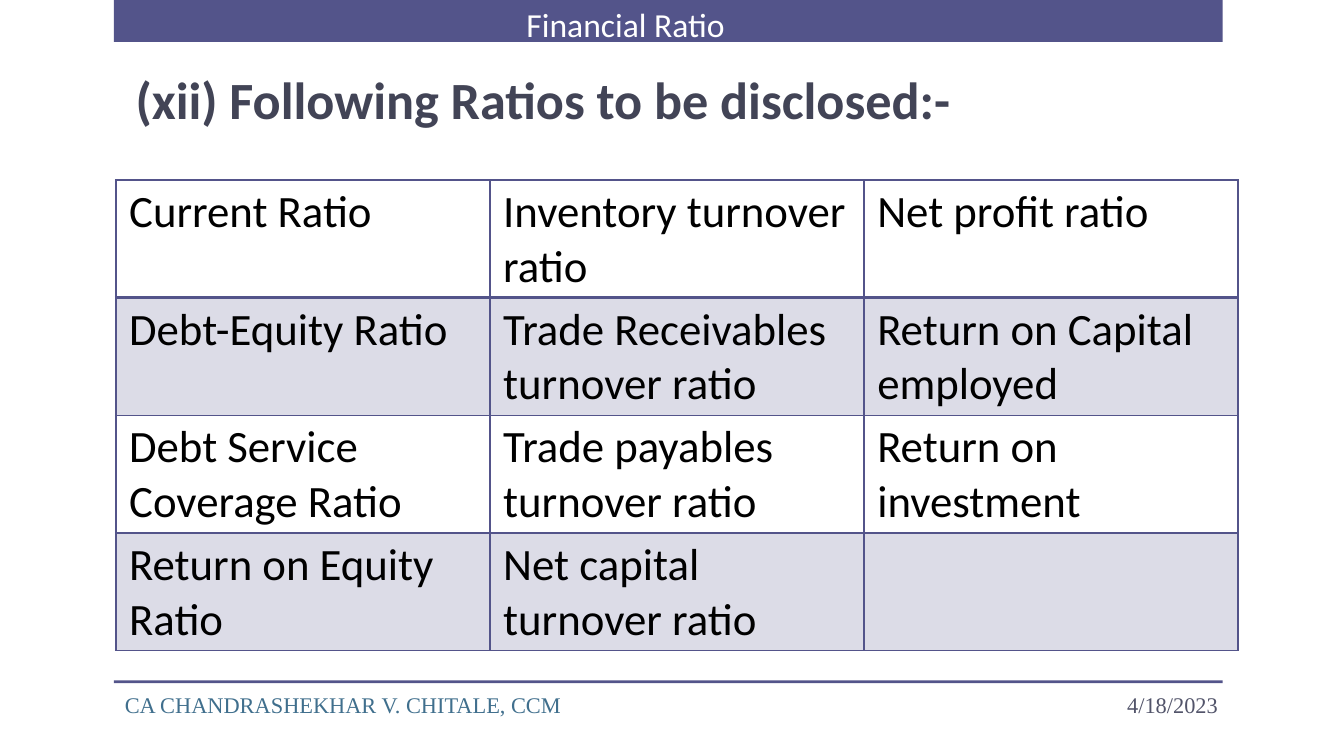
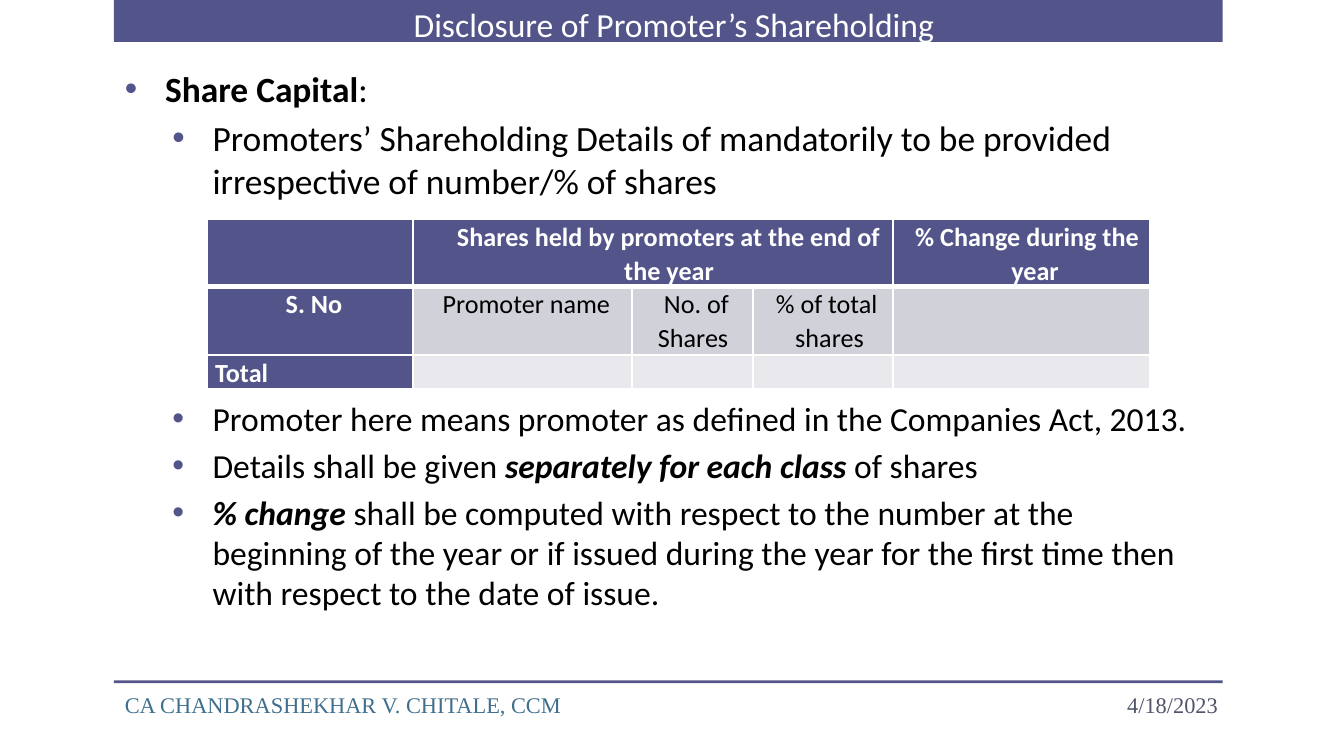
from dataclasses import dataclass
from typing import Optional

from lxml.etree import SubElement
from pptx import Presentation
from pptx.dml.color import RGBColor
from pptx.enum.shapes import MSO_SHAPE as Shape
from pptx.enum.text import MSO_ANCHOR as Anchor, MSO_AUTO_SIZE as AutoSize, PP_ALIGN as Align
from pptx.oxml.ns import qn
from pptx.util import Pt

COLORS = {
    "accent": "53548A",
    "heading": "424456",
    "date": "52546A",
    "author": "406F8D",
    "black": "000000",
    "white": "FFFFFF",
    "band_dark": "D1D1DA",
    "band_light": "E9E9ED",
}


@dataclass(frozen=True)
class Look:
    size: float
    color: str
    bold: bool = False
    font: str = "Calibri"


@dataclass(frozen=True)
class Box:
    left: float
    top: float
    width: float
    height: float

    def lengths(self) -> tuple:
        return Pt(self.left), Pt(self.top), Pt(self.width), Pt(self.height)


@dataclass(frozen=True)
class Run:
    text: str
    bold: bool = False
    italic: bool = False


@dataclass(frozen=True)
class Bullet:
    runs: tuple
    size: float = 18
    margin: float = 47
    before: float = 3.6


@dataclass(frozen=True)
class Cell:
    text: str = ""
    fill: Optional[str] = None
    alpha: Optional[int] = None
    look: Look = Look(14, "black")
    align: Optional[Align] = None
    margin: float = 0
    indent: float = 0
    span: int = 1
    spacing: Optional[float] = None


@dataclass(frozen=True)
class Grid:
    box: Box
    columns: tuple
    rows: tuple
    cells: tuple
    border: str
    header_rule: float
    inset_x: float = 0
    inset_y: float = 0


BAND = Box(61, 0, 594, 22.5)
FOOTER_RULE = Box(61, 364.5, 594, 1.5)
FOOTERS = (
    (Box(491.8, 366.5, 167.8, 21.6), "4/18/2023",
     Look(12, "date", font="Times New Roman"), Align.RIGHT),
    (Box(59.8, 366.5, 383.8, 21.6), "CA CHANDRASHEKHAR V. CHITALE, CCM",
     Look(12, "author", font="Times New Roman"), Align.LEFT),
)

RATIOS = (
    ("Current Ratio", "Inventory turnover ratio", "Net profit ratio"),
    ("Debt-Equity Ratio", "Trade Receivables turnover ratio", "Return on Capital employed"),
    ("Debt Service Coverage Ratio", "Trade payables turnover ratio", "Return on investment"),
    ("Return on Equity Ratio", "Net capital turnover ratio", ""),
)
RATIO_GRID = Grid(
    box=Box(62, 96.5, 601, 252),
    columns=(200.4,) * 3,
    rows=(63,) * 4,
    cells=tuple(
        tuple(Cell(text, "accent" if row % 2 else None, 20, Look(24, "black"))
              for text in texts)
        for row, texts in enumerate(RATIOS)
    ),
    border="accent", header_rule=2, inset_x=7.2, inset_y=2.7,
)

HEAD = Look(14, "white", bold=True)


def head(text: str = "", margin: float = 0, indent: float = 0,
         align: Align = Align.CENTER, span: int = 1) -> Cell:
    return Cell(text, "accent", None, HEAD, align, margin, indent, span, 1.07)


def column_name(text: str, margin: float, indent: float) -> Cell:
    return Cell(text, "band_dark", align=Align.CENTER, margin=margin,
                indent=indent, spacing=1.07)


PROMOTER_GRID = Grid(
    box=Box(111, 117.5, 505, 89.5),
    columns=(110.2, 117.4, 64.8, 74.9, 137.5),
    rows=(36, 36.7, 18),
    cells=(
        (head(), head("Shares held by promoters at the end of the year", 17.5, -0.5, span=3),
         None, None, head("% Change during the year", 15, -8.5)),
        (head("S. No", 49.7, -45.4), column_name("Promoter name", 49.7, -45.4),
         column_name("No. of Shares", 0.7, 3.6), column_name("% of total shares", 7.2, -3),
         Cell(fill="band_dark")),
        (head("Total", 49.7, -45.4, Align.LEFT), *(Cell(fill="band_light"),) * 4),
    ),
    border="white", header_rule=3,
)

SHARE_CAPITAL = (
    Bullet((Run("Share Capital", bold=True), Run(":")), 19, 21.6, 0),
    Bullet((Run("Promoters’ Shareholding Details of mandatorily to be provided "
                "irrespective of number/% of shares"),), 19),
    # Leaves room for the promoter table
    Bullet((Run("Promoter here means promoter as defined in the Companies Act, 2013."),),
           before=105),
    Bullet((Run("Details shall be given "),
            Run("separately for each class ", bold=True, italic=True), Run("of shares"))),
    Bullet((Run("% change ", bold=True, italic=True),
            Run("shall be computed with respect to the number at the beginning of the year "
                "or if issued during the year for the first time then with respect to the "
                "date of issue."))),
)


def rgb(name: str) -> RGBColor:
    return RGBColor.from_string(COLORS[name])


def set_look(font, look: Look) -> None:
    font.size, font.name, font.bold = Pt(look.size), look.font, look.bold
    font.color.rgb = rgb(look.color)


def set_indent(paragraph, margin: float, indent: float):
    properties = paragraph._p.get_or_add_pPr()
    properties.set("marL", str(Pt(margin)))
    properties.set("indent", str(Pt(indent)))
    return properties


def add_text(slide, box: Box, text: str, look: Look, align: Align = Align.LEFT,
             anchor: Anchor = Anchor.TOP, wrap: bool = True) -> None:
    frame = slide.shapes.add_textbox(*box.lengths()).text_frame
    frame.word_wrap, frame.vertical_anchor = wrap, anchor
    if not wrap:
        frame.auto_size = AutoSize.SHAPE_TO_FIT_TEXT
    paragraph = frame.paragraphs[0]
    paragraph.text, paragraph.alignment = text, align
    set_look(paragraph.font, look)


def add_bar(slide, box: Box) -> None:
    bar = slide.shapes.add_shape(Shape.RECTANGLE, *box.lengths())
    bar.shadow.inherit = False
    bar.fill.solid()
    bar.fill.fore_color.rgb = rgb("accent")
    bar.line.fill.background()


def add_bullets(slide, box: Box, bullets: tuple) -> None:
    frame = slide.shapes.add_textbox(*box.lengths()).text_frame
    frame.word_wrap = True
    for number, bullet in enumerate(bullets):
        paragraph = frame.add_paragraph() if number else frame.paragraphs[0]
        properties = set_indent(paragraph, bullet.margin, -21.6)
        SubElement(SubElement(properties, qn("a:buClr")), qn("a:srgbClr"), val=COLORS["accent"])
        SubElement(properties, qn("a:buFont"), typeface="Arial")
        SubElement(properties, qn("a:buChar"), char="•")
        paragraph.space_before = Pt(bullet.before)
        set_look(paragraph.font, Look(bullet.size, "black"))
        for part in bullet.runs:
            run = paragraph.add_run()
            run.text, run.font.bold, run.font.italic = part.text, part.bold, part.italic


def set_borders(cell, color: str, top: float, bottom: float) -> None:
    properties = cell._tc.get_or_add_tcPr()
    for side, width in (("L", 1), ("R", 1), ("T", top), ("B", bottom)):
        line = SubElement(properties, qn(f"a:ln{side}"), w=str(Pt(width)))
        SubElement(SubElement(line, qn("a:solidFill")), qn("a:srgbClr"), val=COLORS[color])


def fill_cell(cell, color: Optional[str], alpha: Optional[int]) -> None:
    if color is None:
        cell.fill.background()
        return
    cell.fill.solid()
    cell.fill.fore_color.rgb = rgb(color)
    if alpha is not None:
        tint = cell._tc.tcPr.find(f"{qn('a:solidFill')}/{qn('a:srgbClr')}")
        SubElement(tint, qn("a:alpha"), val=str(alpha * 1000))


def add_grid(slide, grid: Grid) -> None:
    table = slide.shapes.add_table(len(grid.rows), len(grid.columns), *grid.box.lengths()).table
    table.first_row = table.horz_banding = False
    for column, width in zip(table.columns, grid.columns):
        column.width = Pt(width)
    for row, height in zip(table.rows, grid.rows):
        row.height = Pt(height)
    for r, row in enumerate(grid.cells):
        top, bottom = (grid.header_rule if r == edge else 1 for edge in (1, 0))
        for c, entry in enumerate(row):
            cell = table.cell(r, c)
            set_borders(cell, grid.border, top, bottom)
            if entry is None:
                continue
            if entry.span > 1:
                cell.merge(table.cell(r, c + entry.span - 1))
            fill_cell(cell, entry.fill, entry.alpha)
            cell.margin_left = cell.margin_right = Pt(grid.inset_x)
            cell.margin_top = cell.margin_bottom = Pt(grid.inset_y)
            paragraph = cell.text_frame.paragraphs[0]
            paragraph.text = entry.text
            paragraph.alignment, paragraph.line_spacing = entry.align, entry.spacing
            set_indent(paragraph, entry.margin, entry.indent)
            set_look(paragraph.font, entry.look)


def add_page(deck, title: str, title_box: Box):
    """Add a slide with the band, its title and the footer."""
    slide = deck.slides.add_slide(deck.slide_layouts[6])
    add_bar(slide, BAND)
    add_bar(slide, FOOTER_RULE)
    add_text(slide, title_box, title, Look(18, "white"), wrap=False)
    for box, text, look, align in FOOTERS:
        add_text(slide, box, text, look, align, Anchor.MIDDLE)
    return slide


def main() -> None:
    deck = Presentation()
    deck.slide_width, deck.slide_height = Pt(720), Pt(405)

    ratios = add_page(deck, "Financial Ratio", Box(275, -1.5, 122.4, 29))
    add_text(ratios, Box(65.5, 32.5, 594, 276.5), "(xii) Following Ratios to be disclosed:-",
             Look(28, "heading", bold=True))
    add_grid(ratios, RATIO_GRID)

    promoters = add_page(deck, "Disclosure of Promoter’s Shareholding",
                         Box(214.5, -1.5, 296.6, 29))
    add_bullets(promoters, Box(59.8, 32.5, 594, 276.5), SHARE_CAPITAL)
    add_grid(promoters, PROMOTER_GRID)

    deck.save("out.pptx")


if __name__ == "__main__":
    main()
